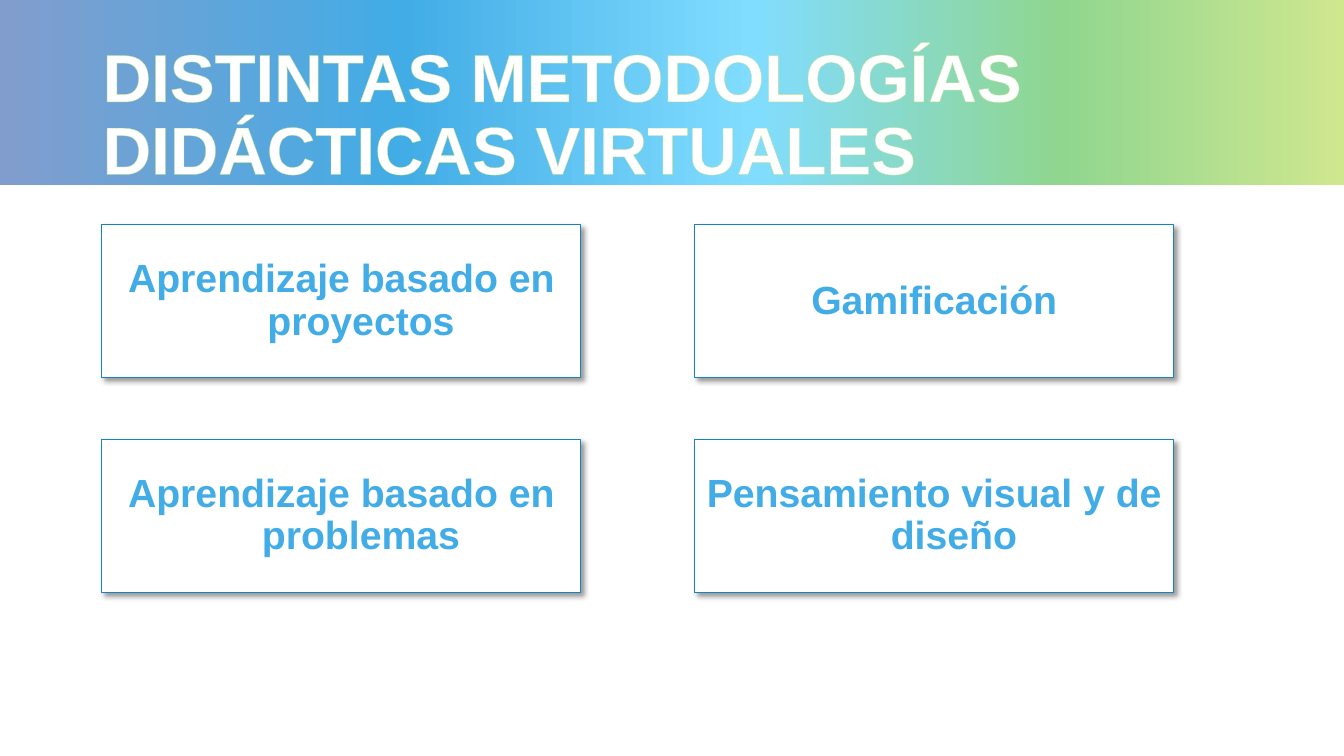
from dataclasses import dataclass

from lxml import etree
from pptx import Presentation
from pptx import util as u
from pptx.dml.color import RGBColor
from pptx.enum import shapes, text
from pptx.oxml import parse_xml
from pptx.oxml.ns import nsdecls, qn
from pptx.shapes.autoshape import Shape
from pptx.slide import Slide

WHITE = RGBColor(0xFF, 0xFF, 0xFF)
BLACK = RGBColor(0x00, 0x00, 0x00)
SKY = RGBColor(0x42, 0xAC, 0xE6)
CARD_EDGE = RGBColor(0x19, 0x82, 0xBD)
TITLE_EDGE = RGBColor(0xBF, 0xE3, 0x8F)
BANNER_STOPS = [
    (0, RGBColor(0x81, 0x9D, 0xCD)),
    (30, SKY),
    (56, RGBColor(0x81, 0xDD, 0xFF)),
    (79, RGBColor(0x90, 0xD6, 0x8F)),
    (100, RGBColor(0xCF, 0xE7, 0x8F)),
]
TITLE_FONT = {"name": "Arial", "size": u.Pt(48), "bold": True}
CARD_FONT = {"name": "Arial", "size": u.Pt(28), "bold": True}
CARD_LEFT, CARD_TOP = 1.01, 2.23
CARD_WIDTH, CARD_HEIGHT = 4.75, 1.52
COLUMN_STEP, ROW_STEP = 5.88, 2.13
HANGING = u.Inches(0.39)


@dataclass(frozen=True)
class Card:
    label: str
    column: int
    row: int


CARDS = [
    Card("Aprendizaje basado en proyectos", 0, 0),
    Card("Aprendizaje basado en problemas", 0, 1),
    Card("Gamificación", 1, 0),
    Card("Pensamiento visual y de diseño", 1, 1),
]


def add_rectangle(page: Slide, left: float, top: float, width: float, height: float) -> Shape:
    box = page.shapes.add_shape(
        shapes.MSO_SHAPE.RECTANGLE,
        u.Inches(left), u.Inches(top), u.Inches(width), u.Inches(height),
    )
    box.shadow.inherit = False
    return box


def write(box: Shape, words: str, font: dict, color: RGBColor):
    """Put one wrapped, vertically centred paragraph in the box and return it."""
    frame = box.text_frame
    frame.word_wrap = True
    frame.vertical_anchor = text.MSO_ANCHOR.MIDDLE
    para = frame.paragraphs[0]
    para.line_spacing = 0.9
    span = para.add_run()
    span.text = words
    for name, value in font.items():
        setattr(span.font, name, value)
    span.font.color.rgb = color
    return para


def add_banner(page: Slide) -> None:
    banner = add_rectangle(page, 0, -0.08, 13.33, 1.92)
    banner.line.fill.background()
    banner.fill.gradient()
    banner.fill.gradient_angle = 0
    stops = banner.element.spPr.find(qn("a:gradFill")).find(qn("a:gsLst"))
    for stop in list(stops):
        stops.remove(stop)
    for percent, color in BANNER_STOPS:
        stop = etree.SubElement(stops, qn("a:gs"), pos=str(percent * 1000))
        etree.SubElement(stop, qn("a:srgbClr"), val=str(color))


def add_title(page: Slide) -> None:
    box = page.shapes.add_textbox(
        u.Inches(0.92), u.Inches(0.32), u.Inches(11.5), u.Inches(1.67)
    )
    para = write(box, "DISTINTAS METODOLOGÍAS DIDÁCTICAS VIRTUALES", TITLE_FONT, WHITE)
    outline = parse_xml(
        f'<a:ln {nsdecls("a")} w="{u.Pt(0.75)}"><a:solidFill>'
        f'<a:srgbClr val="{TITLE_EDGE}"/></a:solidFill></a:ln>'
    )
    para.runs[0].font._element.insert(0, outline)


def add_shadow(box: Shape) -> None:
    effects = box.element.spPr.find(qn("a:effectLst"))
    effects.append(parse_xml(
        f'<a:outerShdw {nsdecls("a")} blurRad="{u.Pt(4)}" dist="{u.Pt(3)}" '
        f'dir="{45 * 60000}" algn="tl" rotWithShape="0">'
        f'<a:srgbClr val="{BLACK}"><a:alpha val="40000"/></a:srgbClr></a:outerShdw>'
    ))


def add_card(page: Slide, card: Card) -> None:
    box = add_rectangle(
        page,
        CARD_LEFT + card.column * COLUMN_STEP,
        CARD_TOP + card.row * ROW_STEP,
        CARD_WIDTH,
        CARD_HEIGHT,
    )
    box.fill.solid()
    box.fill.fore_color.rgb = WHITE
    box.line.color.rgb = CARD_EDGE
    box.line.width = u.Pt(0.75)
    add_shadow(box)
    para = write(box, card.label, CARD_FONT, SKY)
    para.alignment = text.PP_ALIGN.CENTER
    indents = para._p.get_or_add_pPr()
    indents.set("marL", str(HANGING))
    indents.set("indent", str(-HANGING))


def main() -> None:
    deck = Presentation()
    deck.slide_width, deck.slide_height = u.Inches(13.33), u.Inches(7.5)
    page = deck.slides.add_slide(deck.slide_layouts[6])
    add_banner(page)
    add_title(page)
    for card in CARDS:
        add_card(page, card)
    deck.save("out.pptx")


if __name__ == "__main__":
    main()
